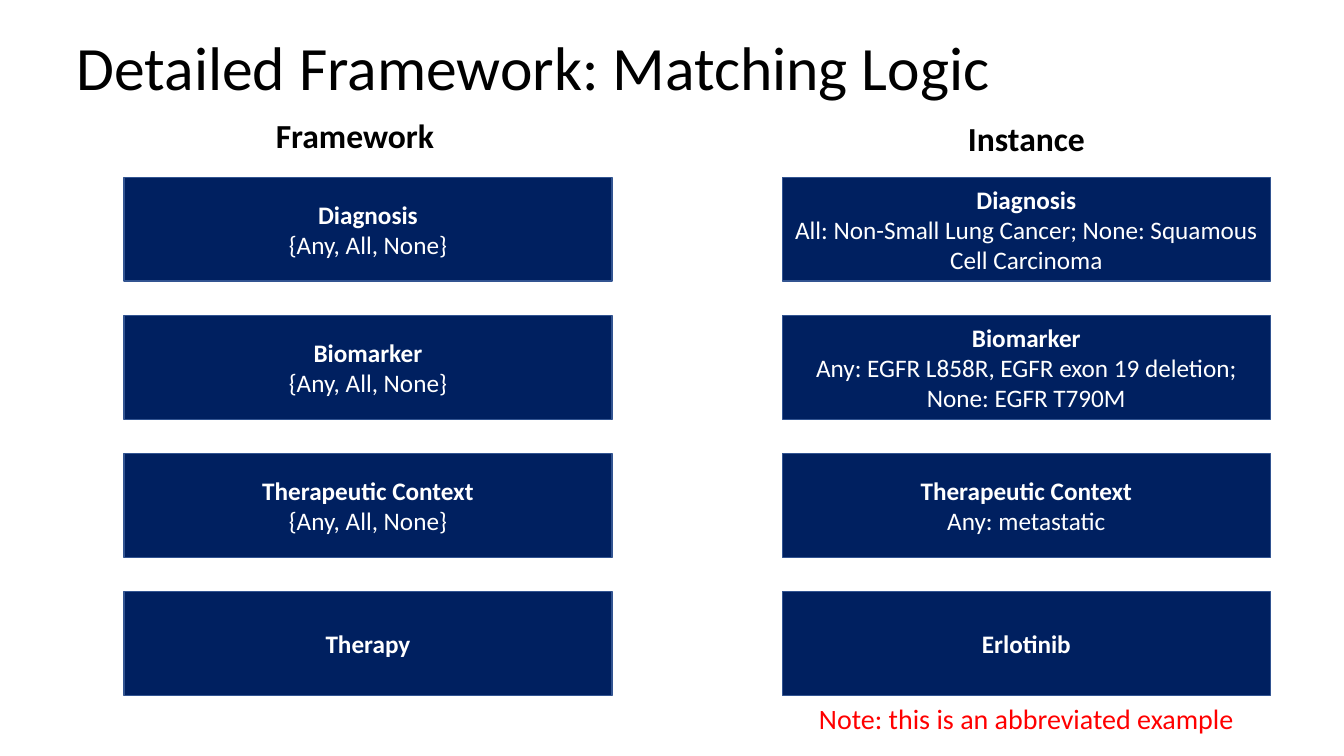
from dataclasses import dataclass

from pptx import Presentation
from pptx.dml.color import RGBColor
from pptx.enum.shapes import MSO_SHAPE
from pptx.enum.text import MSO_ANCHOR as Anchor, PP_ALIGN as Align
from pptx.slide import Slide
from pptx.text.text import _Paragraph as Paragraph
from pptx.util import Inches, Pt

BLACK = RGBColor(0x00, 0x00, 0x00)
WHITE = RGBColor(0xFF, 0xFF, 0xFF)
RED = RGBColor(0xFF, 0x00, 0x00)
NAVY = RGBColor(0x00, 0x20, 0x60)
EDGE_BLUE = RGBColor(0x32, 0x54, 0x91)

FONT = "Calibri"
CARD_WIDTH, CARD_HEIGHT = 4.84, 1.03
CARD_TOP, CARD_STEP = 1.76, 1.37


@dataclass
class Label:
    text: str
    left: float
    top: float
    width: float
    height: float
    size: int
    color: RGBColor = BLACK
    bold: bool = False
    align: Align = Align.CENTER
    anchor: Anchor = Anchor.TOP
    line_spacing: float = 1.0


@dataclass
class Column:
    left: float
    cards: list[list[str]]  # each card: bold heading, then optional detail


LABELS = [
    Label("Detailed Framework: Matching Logic", 0.66, -0.03, 11.5, 1.45, 44,
          align=Align.LEFT, anchor=Anchor.MIDDLE, line_spacing=0.9),
    Label("Framework", 2.56, 1.09, 1.92, 0.5, 24, bold=True),
    Label("Instance", 9.22, 1.12, 1.92, 0.5, 24, bold=True),
    Label("Note: this is an abbreviated example", 7.76, 6.91, CARD_WIDTH, 0.44, 20, RED),
]

RULE = "{Any, All, None}"
COLUMNS = [
    Column(1.23, [
        ["Diagnosis", RULE],
        ["Biomarker", RULE],
        ["Therapeutic Context", RULE],
        ["Therapy"],
    ]),
    Column(7.76, [
        ["Diagnosis", "All: Non-Small Lung Cancer; None: Squamous Cell Carcinoma"],
        ["Biomarker", "Any: EGFR L858R, EGFR exon 19 deletion; None: EGFR T790M"],
        ["Therapeutic Context", "Any: metastatic"],
        ["Erlotinib"],
    ]),
]


def style(para: Paragraph, size: int, color: RGBColor, bold: bool, align: Align) -> None:
    para.alignment = align
    for span in para.runs:
        span.font.name = FONT
        span.font.size = Pt(size)
        span.font.bold = bold
        span.font.color.rgb = color


def add_label(page: Slide, label: Label) -> None:
    box = page.shapes.add_textbox(Inches(label.left), Inches(label.top),
                                  Inches(label.width), Inches(label.height))
    frame = box.text_frame
    frame.word_wrap = True
    frame.vertical_anchor = label.anchor
    frame.text = label.text
    para = frame.paragraphs[0]
    para.line_spacing = label.line_spacing
    style(para, label.size, label.color, label.bold, label.align)


def add_card(page: Slide, left: float, top: float, lines: list[str]) -> None:
    card = page.shapes.add_shape(MSO_SHAPE.RECTANGLE, Inches(left), Inches(top),
                                 Inches(CARD_WIDTH), Inches(CARD_HEIGHT))
    card.shadow.inherit = False
    card.fill.solid()
    card.fill.fore_color.rgb = NAVY
    card.line.color.rgb = EDGE_BLUE
    card.line.width = Pt(1)
    frame = card.text_frame
    frame.word_wrap = True
    frame.vertical_anchor = Anchor.MIDDLE
    frame.text = "\n".join(lines)
    for index, para in enumerate(frame.paragraphs):
        style(para, 18, WHITE, index == 0, Align.CENTER)


def main() -> None:
    deck = Presentation()
    deck.slide_width, deck.slide_height = Inches(13.33), Inches(7.5)
    page = deck.slides.add_slide(deck.slide_layouts[6])

    # Title, column headings and note
    for label in LABELS:
        add_label(page, label)

    # Two columns of evenly spaced cards
    for column in COLUMNS:
        for row, lines in enumerate(column.cards):
            add_card(page, column.left, CARD_TOP + row * CARD_STEP, lines)

    deck.save("out.pptx")


if __name__ == "__main__":
    main()
